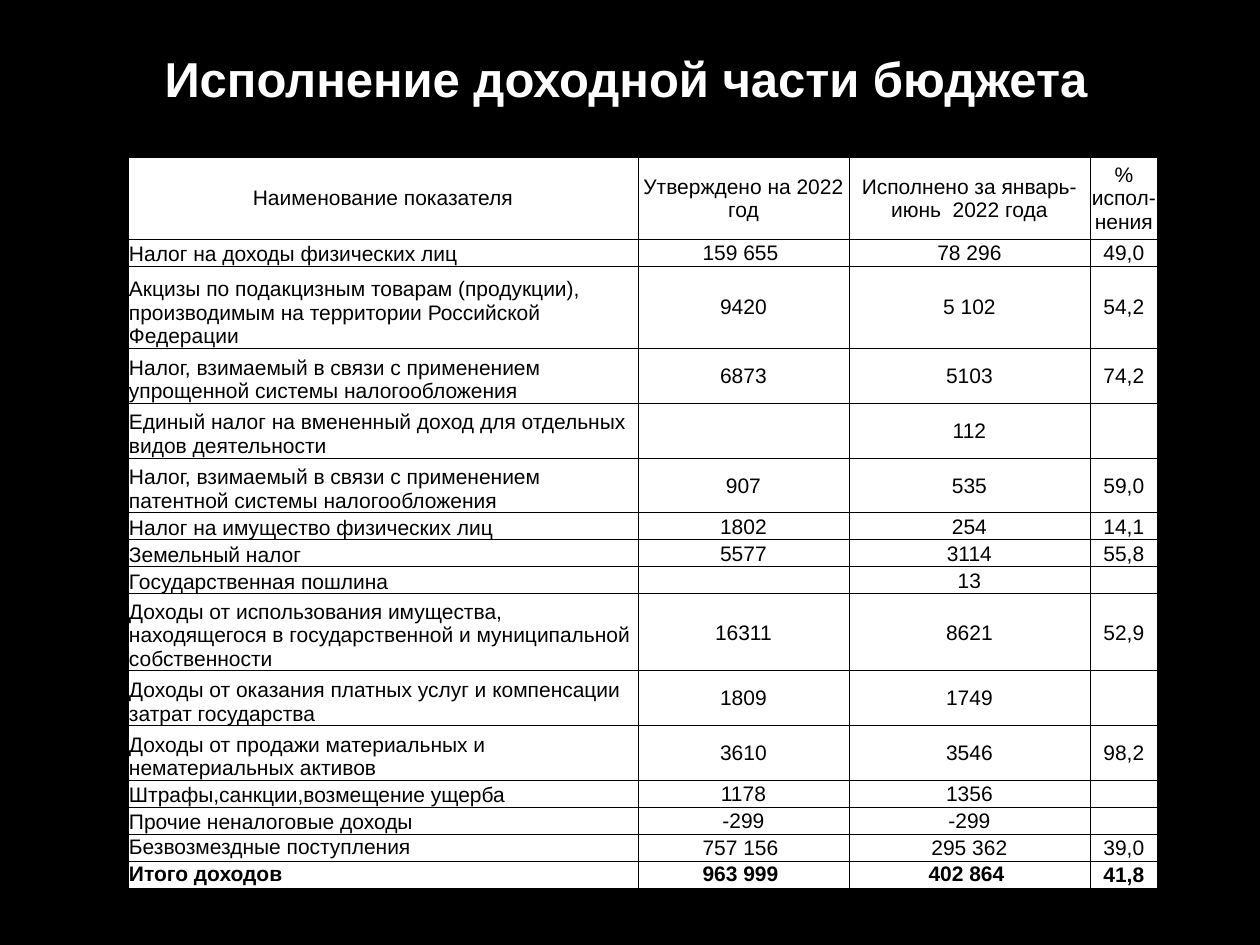
import pptx
import pptx.dml.color
import pptx.enum.text
import pptx.oxml.ns
import pptx.util
from lxml import etree

BLACK = pptx.dml.color.RGBColor(0, 0, 0)
WHITE = pptx.dml.color.RGBColor(255, 255, 255)
ALIGN = pptx.enum.text.PP_ALIGN
ANCHOR = pptx.enum.text.MSO_ANCHOR
WIDTHS = [510, 211, 241, 68]
SHORT, MID, TALL = 27, 55, 82
ROWS = [
    (TALL, "Наименование показателя", "Утверждено на 2022 год",
     "Исполнено за январь-июнь  2022 года", "% испол-нения"),
    (SHORT, "Налог на доходы физических лиц", "159 655 ", "78 296", "49,0"),
    (TALL, "Акцизы по подакцизным товарам (продукции), производимым на "
     "территории Российской Федерации", "9420", "5 102", "54,2"),
    (MID, "Налог, взимаемый в связи с применением упрощенной системы "
     "налогообложения", "6873", "5103", "74,2"),
    (MID, "Единый налог на вмененный доход для отдельных видов деятельности",
     "", "112", ""),
    (MID, "Налог, взимаемый в связи с применением патентной системы "
     "налогообложения", "907", "535", "59,0"),
    (SHORT, "Налог на имущество физических лиц", "1802", "254", "14,1"),
    (SHORT, "Земельный налог", "5577", "3114", "55,8"),
    (SHORT, "Государственная пошлина", "", "13", ""),
    (71, "Доходы от использования имущества, находящегося в государственной "
     "и муниципальной собственности", "16311", "8621", "52,9"),
    (MID, "Доходы от оказания платных услуг и компенсации затрат государства",
     "1809", "1749", ""),
    (MID, "Доходы от продажи материальных и нематериальных активов",
     "3610", "3546", "98,2"),
    (SHORT, "Штрафы,санкции,возмещение ущерба", "1178", "1356", ""),
    (SHORT, "Прочие неналоговые доходы", "-299", "-299", ""),
    (SHORT, "Безвозмездные поступления", "757 156 ", "295 362", "39,0"),
    (SHORT, "Итого доходов", "963 999 ", "402 864 ", "41,8"),
]


def px(count):
    """Turn pixels into EMU."""
    return pptx.util.Emu(round(count * 914400 / 126))


class Deck:
    """Hold the style and the current slide."""

    def __init__(self, face, ground):
        self.face = face
        self.file = pptx.Presentation()
        self.file.slide_width, self.file.slide_height = px(1260), px(945)
        self.slide = self.file.slides.add_slide(self.file.slide_layouts[6])
        fill = self.slide.background.fill
        fill.solid()
        fill.fore_color.rgb = ground

    def label(self, line, text, size, color, align, bold=False):
        """Fill one paragraph with styled text."""
        line.alignment = align
        font = line.font
        font.name, font.size, font.bold = self.face, pptx.util.Pt(size), bold
        font.color.rgb = color
        if text:
            line.add_run().text = text
        else:
            end = etree.SubElement(line._p, pptx.oxml.ns.qn("a:endParaRPr"))
            end.set("sz", str(size * 100))

    def title(self, text, box):
        """Add the heading."""
        frame = self.slide.shapes.add_textbox(*map(px, box)).text_frame
        frame.word_wrap = True
        frame.vertical_anchor = ANCHOR.MIDDLE
        self.label(frame.paragraphs[0], text, 28, WHITE, ALIGN.CENTER, True)

    def edge(self, cell):
        """Draw a thin line on each side of a cell."""
        props = cell._tc.get_or_add_tcPr()
        for spot, side in enumerate("LRTB"):
            line = etree.Element(pptx.oxml.ns.qn(f"a:ln{side}"), w="6350")
            fill = etree.SubElement(line, pptx.oxml.ns.qn("a:solidFill"))
            etree.SubElement(fill, pptx.oxml.ns.qn("a:srgbClr"), val=str(BLACK))
            props.insert(spot, line)

    def cell(self, cell, text, align, anchor, bold):
        """Style and fill one table cell."""
        cell.fill.solid()
        cell.fill.fore_color.rgb = WHITE
        cell.margin_left = cell.margin_right = cell.margin_top = px(1)
        cell.margin_bottom = 0
        cell.vertical_anchor = anchor
        self.edge(cell)
        line = cell.text_frame.paragraphs[0]
        self.label(line, text, 12, BLACK, align, bold)

    def table(self, left, top, widths, rows):
        """Add the table with its heading, body and total rows."""
        high = sum(row[0] for row in rows)
        box = map(px, (left, top, sum(widths), high))
        table = self.slide.shapes.add_table(len(rows), len(widths), *box).table
        table.first_row = table.horz_banding = False
        for column, width in zip(table.columns, widths):
            column.width = px(width)
        last = len(rows) - 1
        for y, (height, *texts) in enumerate(rows):
            table.rows[y].height = px(height)
            for x, text in enumerate(texts):
                align, anchor = ALIGN.CENTER, ANCHOR.MIDDLE
                if x == 0 and y >= last - 1:
                    align, anchor = ALIGN.JUSTIFY, ANCHOR.TOP
                elif x == 0 and y > 0:
                    align, anchor = ALIGN.LEFT, ANCHOR.BOTTOM
                elif y == last and x < 3:
                    anchor = ANCHOR.TOP
                self.cell(table.cell(y, x), text, align, anchor, y == last)


def main():
    """Build and save the slide."""
    deck = Deck("Arial", BLACK)
    deck.title("Исполнение доходной части бюджета", (59, 32, 1134, 91))
    deck.table(128, 157, WIDTHS, ROWS)
    deck.file.save("out.pptx")


if __name__ == "__main__":
    main()
